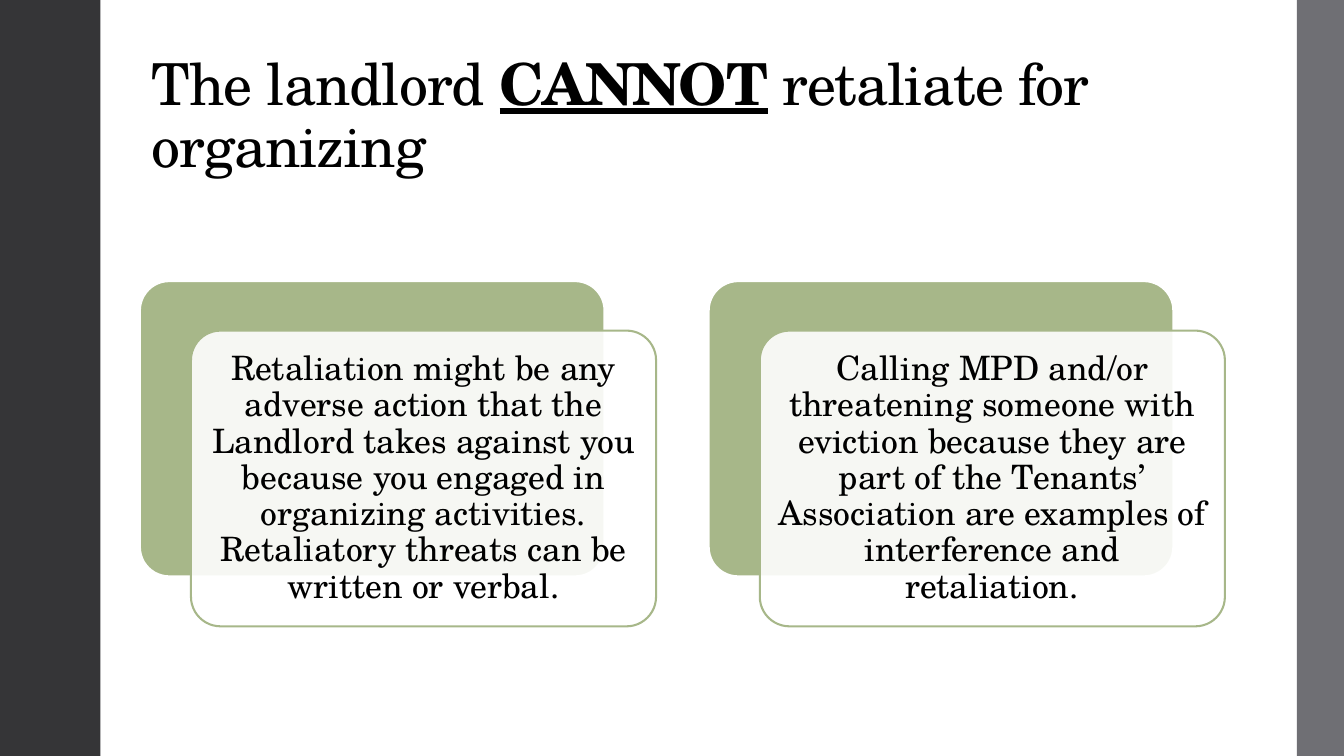
from lxml import etree
from pptx import Presentation
from pptx.dml.color import RGBColor
from pptx.enum.shapes import MSO_SHAPE
from pptx.enum.text import MSO_ANCHOR, PP_ALIGN
from pptx.oxml.ns import qn
from pptx.util import Cm, Pt

RECT = MSO_SHAPE.RECTANGLE
ROUND = MSO_SHAPE.ROUNDED_RECTANGLE
MIDDLE, BOTTOM = MSO_ANCHOR.MIDDLE, MSO_ANCHOR.BOTTOM
CENTER = PP_ALIGN.CENTER

BLACK = RGBColor(0x00, 0x00, 0x00)
WHITE = RGBColor(0xFF, 0xFF, 0xFF)
CHARCOAL = RGBColor(0x35, 0x35, 0x37)
GRAY = RGBColor(0x6F, 0x6F, 0x74)
SAGE = RGBColor(0xA7, 0xB7, 0x89)
FONT = "TeX Gyre Schola"

SLIDE_W, SLIDE_H = 25.4, 14.29
CARD_W, CARD_H = 9.76, 6.53
CARD_LEFT, CARD_TOP, CARD_PITCH = 2.64, 5.31, 10.75
SHIFT_X, SHIFT_Y = 0.97, 0.94
CARDS = [
    "Retaliation might be any adverse action that the Landlord takes against you "
    "because you engaged in organizing activities. Retaliatory threats can be "
    "written or verbal.",
    "Calling MPD and/or threatening someone with eviction because they are part of "
    "the Tenants’ Association are examples of interference and retaliation.",
]


def add_box(s, shape, x, y, w, h, fill, line=None, line_width=1):
    sp = s.shapes.add_shape(shape, Cm(x), Cm(y), Cm(w), Cm(h))
    sp.shadow.inherit = False
    sp.fill.solid()
    sp.fill.fore_color.rgb = fill
    if line is None:
        sp.line.fill.background()
    else:
        sp.line.color.rgb = line
        sp.line.width = Pt(line_width)
    if shape == ROUND:
        sp.adjustments[0] = 0.1
    return sp


def style_paragraph(p, size):
    p.line_spacing = 0.9
    p.font.name = FONT
    p.font.size = Pt(size)
    p.font.color.rgb = BLACK


def add_title(s, x, y, w, h):
    tf = s.shapes.add_textbox(Cm(x), Cm(y), Cm(w), Cm(h)).text_frame
    tf.word_wrap = True
    tf.vertical_anchor = BOTTOM
    p = tf.paragraphs[0]
    style_paragraph(p, 31)
    for text, strong in (("The landlord ", False), ("CANNOT", True),
                         (" retaliate for organizing", False)):
        r = p.add_run()
        r.text = text
        r.font.bold = r.font.underline = strong
        r._r.get_or_add_rPr().set("spc", "-50")


def add_side_bars(s, w, h):
    left_w, right_w = 1.9, 0.89
    add_box(s, RECT, 0, 0, left_w, h, CHARCOAL)
    add_box(s, RECT, w - right_w, 0, right_w, h, GRAY)


def add_card(s, x, y, w, h, text):
    panel_w, panel_h = w - SHIFT_X, h - SHIFT_Y
    add_box(s, ROUND, x, y, panel_w, panel_h, SAGE, WHITE, 1.35)
    sp = add_box(s, ROUND, x + SHIFT_X, y + SHIFT_Y, panel_w, panel_h, WHITE, SAGE, 1.1)
    color = sp._element.spPr.find(qn("a:solidFill")).find(qn("a:srgbClr"))
    etree.SubElement(color, qn("a:alpha")).set("val", "90000")
    tf = sp.text_frame
    tf.word_wrap = True
    tf.vertical_anchor = MIDDLE
    tf.margin_left = tf.margin_right = tf.margin_top = tf.margin_bottom = Cm(0.18)
    p = tf.paragraphs[0]
    p.text = text
    p.alignment = CENTER
    style_paragraph(p, 18)


def main():
    prs = Presentation()
    prs.slide_width, prs.slide_height = Cm(SLIDE_W), Cm(SLIDE_H)
    s = prs.slides.add_slide(prs.slide_layouts[6])
    s.background.fill.solid()
    s.background.fill.fore_color.rgb = WHITE
    add_title(s, 2.62, 0.76, 20.55, 2.77)
    add_side_bars(s, SLIDE_W, SLIDE_H)
    for i, text in enumerate(CARDS):
        add_card(s, CARD_LEFT + i * CARD_PITCH, CARD_TOP, CARD_W, CARD_H, text)
    prs.save("out.pptx")


if __name__ == "__main__":
    main()
